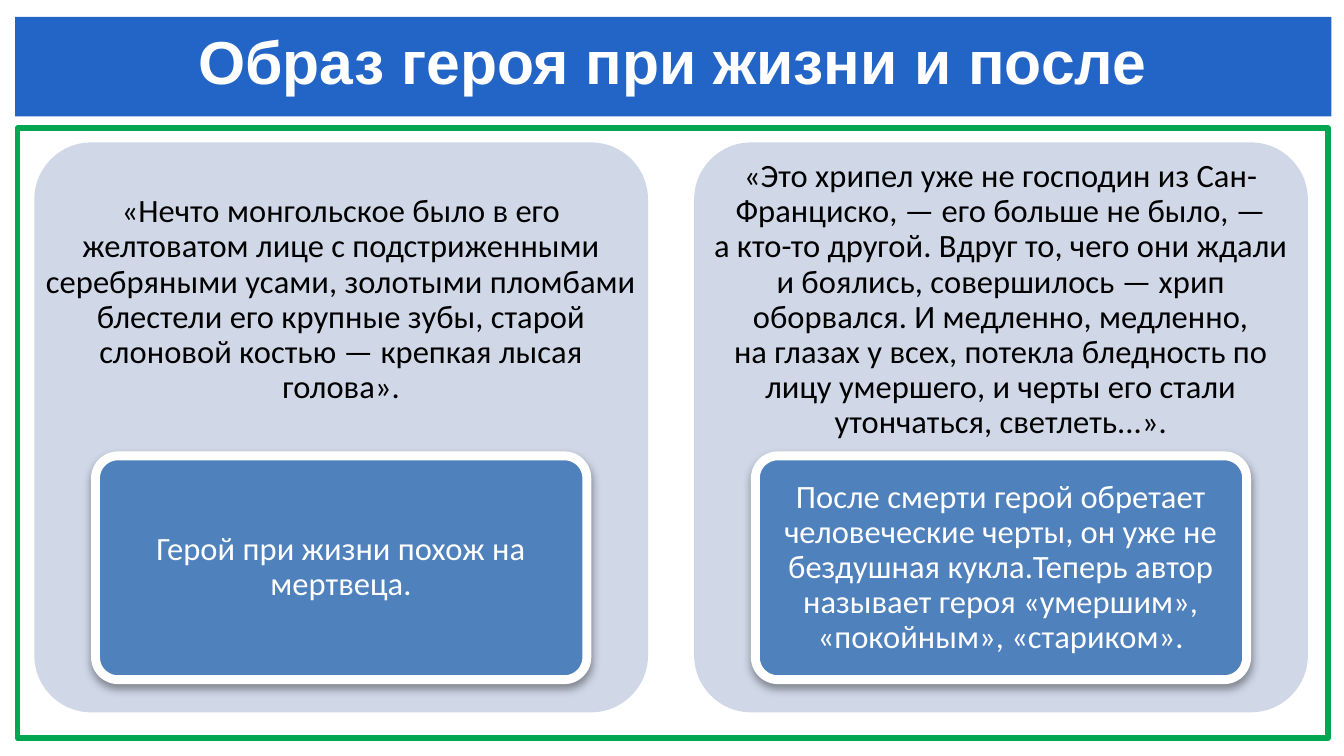
from lxml import etree
from pptx import Presentation
from pptx.dml.color import RGBColor
from pptx.enum.shapes import MSO_SHAPE as Shape
from pptx.enum.text import MSO_ANCHOR as Anchor, PP_ALIGN as Align
from pptx.oxml.ns import qn
from pptx.util import Cm, Pt

WHITE, BLACK = "FFFFFF", "000000"
BLUE, GREEN = "2365C7", "00A650"
PANEL_FILL, CARD_FILL = "D0D8E8", "4F81BD"

TITLE = "Образ героя при жизни и после"
# Each panel: lines of the quotation, conclusion
PANELS = [
    (["«Нечто монгольское было в его желтоватом лице с подстриженными "
      "серебряными усами, золотыми пломбами блестели его крупные зубы, "
      "старой слоновой костью — крепкая лысая голова»."],
     "Герой при жизни похож на мертвеца."),
    (["«Это хрипел уже не господин из Сан-Франциско, — его больше не было, —",
      "а кто-то другой. Вдруг то, чего они ждали и боялись, совершилось — "
      "хрип оборвался. И медленно, медленно,",
      "на глазах у всех, потекла бледность по лицу умершего, и черты его "
      "стали утончаться, светлеть...»."],
     "После смерти герой обретает человеческие черты, он уже не бездушная "
     "кукла.Теперь автор называет героя «умершим», «покойным», «стариком»."),
]


def color(value):
    return RGBColor.from_string(value)


def paint(shape, fill=None, line=None, line_width=0):
    if fill:
        shape.fill.solid()
        shape.fill.fore_color.rgb = color(fill)
    else:
        shape.fill.background()
    if line:
        shape.line.color.rgb = color(line)
        shape.line.width = Pt(line_width)
    else:
        shape.line.fill.background()


def write(shape, lines, font_name, size, font_color, inset, bold=False, spacing=0.9):
    """Centre the lines, parted by line breaks, in one paragraph."""
    frame = shape.text_frame
    frame.word_wrap = True
    frame.vertical_anchor = Anchor.MIDDLE
    frame.margin_left = frame.margin_right = Cm(inset)
    frame.margin_top = frame.margin_bottom = 0
    paragraph = frame.paragraphs[0]
    paragraph.alignment = Align.CENTER
    paragraph.line_spacing = spacing
    for index, line in enumerate(lines):
        if index:
            paragraph.add_line_break()
        run = paragraph.add_run()
        run.text = line
        run.font.name = font_name
        run.font.size = Pt(size)
        run.font.bold = bold
        run.font.color.rgb = color(font_color)


def add_box(slide, kind, left, top, width, height):
    shape = slide.shapes.add_shape(kind, Cm(left), Cm(top), Cm(width), Cm(height))
    shape.shadow.inherit = False
    return shape


def add_soft_shadow(shape):
    effects = shape._element.spPr.find(qn("a:effectLst"))
    shadow = etree.SubElement(effects, qn("a:outerShdw"), blurRad=str(Pt(3.1)),
                              dist=str(Pt(1.6)), dir="5400000", rotWithShape="0")
    tint = etree.SubElement(shadow, qn("a:srgbClr"), val=BLACK)
    etree.SubElement(tint, qn("a:alpha"), val="38000")


def add_title_bar(slide, left, top, width, height):
    title = slide.shapes.title
    title.left, title.top = Cm(left), Cm(top)
    title.width, title.height = Cm(width), Cm(height)
    paint(title, BLUE)
    write(title, [TITLE], "Arial", 20.5, WHITE, 0, bold=True, spacing=1)
    title.text_frame.margin_bottom = Cm(0.15)


def add_border(slide, left, top, width, height):
    border = add_box(slide, Shape.RECTANGLE, left, top, width, height)
    paint(border, line=GREEN, line_width=1.9)


def add_panel(slide, left, top, width, height, quotation, conclusion):
    panel = add_box(slide, Shape.ROUNDED_RECTANGLE, left, top, width, height)
    panel.adjustments[0] = 0.1
    paint(panel, PANEL_FILL)

    quote = slide.shapes.add_textbox(Cm(left), Cm(top + 0.1), Cm(width), Cm(3.56))
    write(quote, quotation, "Calibri", 11, BLACK, 0.12)

    margin = 0.73
    card = add_box(slide, Shape.ROUNDED_RECTANGLE, left + margin, top + 3.74,
                   width - 2 * margin, 2.67)
    card.adjustments[0] = 0.1
    paint(card, CARD_FILL, WHITE, 3)
    add_soft_shadow(card)
    write(card, [conclusion], "Calibri", 11, WHITE, 0.08)


def main():
    presentation = Presentation()
    presentation.slide_width, presentation.slide_height = Cm(16.03), Cm(9.02)
    slide = presentation.slides.add_slide(presentation.slide_layouts[5])
    add_title_bar(slide, 0.18, 0.2, 15.7, 1.19)
    add_border(slide, 0.21, 1.53, 15.63, 7.28)
    panel_width, gap = 7.32, 0.55
    for index, (quotation, conclusion) in enumerate(PANELS):
        left = 0.41 + index * (panel_width + gap)
        add_panel(slide, left, 1.7, panel_width, 6.8, quotation, conclusion)
    presentation.save("out.pptx")


if __name__ == "__main__":
    main()
